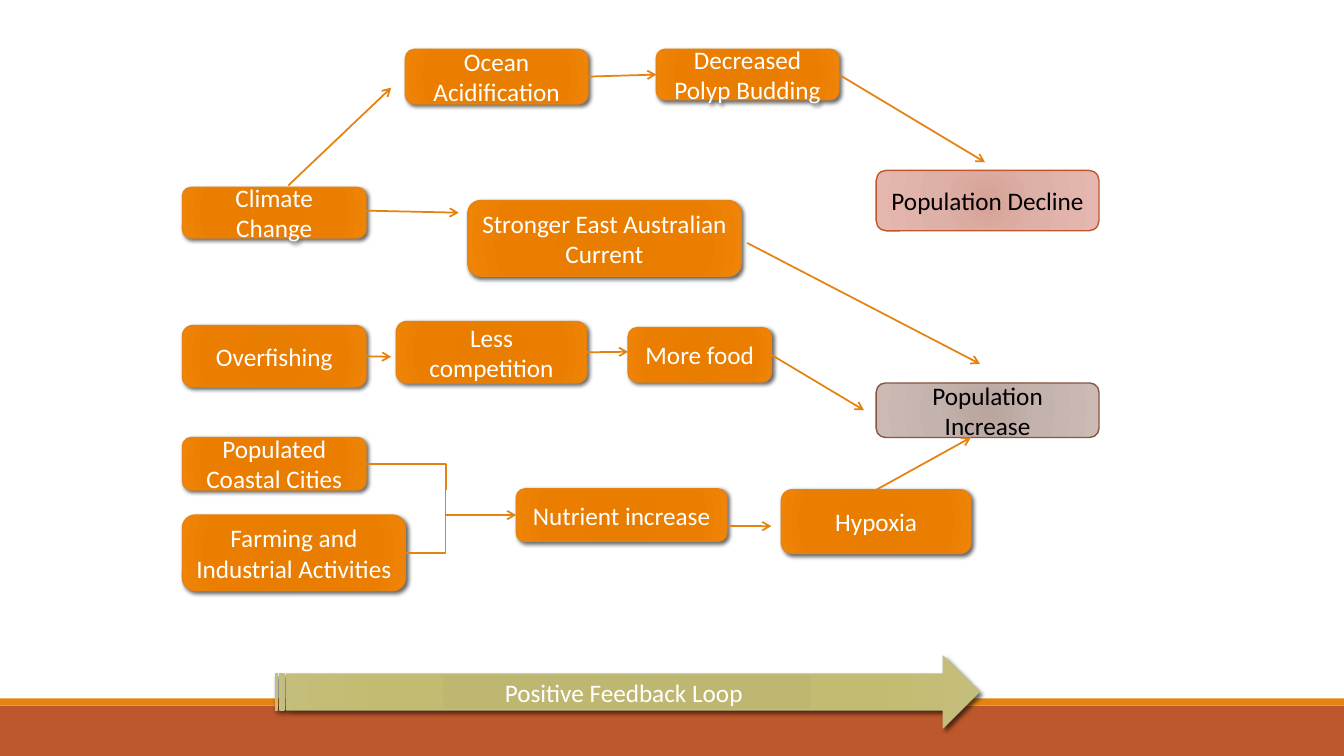
"""Build a flow chart slide on the causes of population decline and increase."""
import pptx
import pptx.dml.color
import pptx.enum.shapes
import pptx.enum.text
import pptx.oxml
import pptx.oxml.ns
import pptx.util

Inches = pptx.util.Inches
Pt = pptx.util.Pt
KIND = pptx.enum.shapes.MSO_SHAPE
LINK = pptx.enum.shapes.MSO_CONNECTOR
NS = pptx.oxml.ns.nsdecls("a")

BANDS = [(7, 0.5, "BD582C"), (6.93, 0.07, "E48312")]

ORANGE = ([(0, "E57B00"), (34, "E87D00"), (70, "EB7E00"), (100, "EF8407")],
          "E48312", "FFFFFF", True)
OLIVE = ([(0, "BEB76E"), (34, "BEB771"), (70, "C3BB71"), (100, "C5BF7D")],
         "C2BC80", "FFFFFF", True)
RED = ([(0, "D7A197"), (45, "DEB1A8"), (100, "E6B7AE")],
       "BD582C", "000000", False)
BROWN = ([(0, "B9A49E"), (45, "C4B2AD"), (100, "CCBAB5")],
         "865640", "000000", False)

LOOP = ("Positive Feedback Loop", 2.73, 6.51, 6.98, 0.71)
ENDS = [
    ("Population Decline", 8.69, 1.69, 2.21, 0.6, RED),
    ("Population Increase", 8.69, 3.8, 2.21, 0.54, BROWN),
]
CAUSES = [
    ("Climate Change", 1.81, 1.86, 1.82, 0.5),
    ("Overfishing", 1.81, 3.23, 1.82, 0.61),
    ("Populated Coastal Cities", 1.81, 4.34, 1.82, 0.52),
    ("Ocean Acidification", 4.02, 0.49, 1.81, 0.54),
    ("Decreased Polyp Budding", 6.51, 0.49, 1.81, 0.5),
    ("Stronger East Australian Current", 4.64, 1.99, 2.71, 0.75),
    ("Less competition", 3.93, 3.19, 1.89, 0.61),
    ("More food", 6.23, 3.25, 1.42, 0.54),
    ("Nutrient increase", 5.12, 4.85, 2.09, 0.52),
    ("Farming and Industrial Activities", 1.81, 5.11, 2.21, 0.75),
    ("Hypoxia", 7.75, 4.86, 1.88, 0.63),
]

TOP, LEFT, RIGHT = 0, 1, 3
ARROWS = [
    ((2.86, 1.84), (3.88, 0.87)),
    (("Ocean Acidification", RIGHT), ("Decreased Polyp Budding", LEFT)),
    (("Decreased Polyp Budding", RIGHT), (9.77, 1.61)),
    ((3.63, 2.09), (4.55, 2.11)),
    ((7.41, 2.41), (9.72, 3.61)),
    (("Overfishing", RIGHT), (3.88, 3.54)),
    (("Less competition", RIGHT), (6.23, 3.49)),
    (("More food", RIGHT), (8.57, 4.07)),
    ((4.42, 5.11), ("Nutrient increase", LEFT)),
    ((7.21, 5.22), (7.65, 5.22)),
    (("Hypoxia", TOP), (9.63, 4.34)),
]
BENDS = [((3.63, 4.6), (4.42, 4.86)), ((4.02, 5.49), (4.42, 4.86))]


def tint(hue):
    return pptx.dml.color.RGBColor.from_string(hue)


def shade(shape, stops):
    marks = "".join(
        f'<a:gs pos="{pos * 1000}"><a:srgbClr val="{hue}"/></a:gs>'
        for pos, hue in stops)
    fill = pptx.oxml.parse_xml(
        f'<a:gradFill {NS} rotWithShape="1"><a:gsLst>{marks}</a:gsLst>'
        '<a:path path="circle"><a:fillToRect l="100000" t="100000" '
        'r="100000" b="100000"/></a:path></a:gradFill>')
    shape._element.spPr.find(pptx.oxml.ns.qn("a:prstGeom")).addnext(fill)


def drop(shape):
    glow = shape._element.spPr.find(pptx.oxml.ns.qn("a:effectLst"))
    glow.append(pptx.oxml.parse_xml(
        f'<a:outerShdw {NS} blurRad="{Pt(3)}" dist="{Pt(2)}" dir="2700000">'
        '<a:srgbClr val="000000"><a:alpha val="60000"/></a:srgbClr>'
        '</a:outerShdw>'))


def add_box(slide, kind, text, x, y, w, h, style):
    stops, edge, ink, cast = style
    box = slide.shapes.add_shape(kind, *map(Inches, (x, y, w, h)))
    shade(box, stops)
    box.line.color.rgb = tint(edge)
    box.line.width = Pt(1)
    box.shadow.inherit = False
    if cast:
        drop(box)
    frame = box.text_frame
    frame.word_wrap = True
    frame.vertical_anchor = pptx.enum.text.MSO_ANCHOR.MIDDLE
    para = frame.paragraphs[0]
    para.text = text
    para.alignment = pptx.enum.text.PP_ALIGN.CENTER
    para.font.name = "Calibri"
    para.font.size = Pt(18)
    para.font.color.rgb = tint(ink)
    return box


def spot(end, boxes):
    if end[0] not in boxes:
        return Inches(end[0]), Inches(end[1])
    box, side = boxes[end[0]], end[1]
    across = {TOP: 0.5, LEFT: 0, RIGHT: 1}[side]
    down = 0 if side == TOP else 0.5
    return (int(box.left + box.width * across),
            int(box.top + box.height * down))


def add_link(slide, kind, start, stop, boxes):
    link = slide.shapes.add_connector(
        kind, *spot(start, boxes), *spot(stop, boxes))
    if start[0] in boxes:
        link.begin_connect(boxes[start[0]], start[1])
    if stop[0] in boxes:
        link.end_connect(boxes[stop[0]], stop[1])
    link.line.color.rgb = tint("E48312")
    link.line.width = Pt(1.25)
    link._element.spPr.append(pptx.oxml.parse_xml(f"<a:effectLst {NS}/>"))
    return link


def main():
    deck = pptx.Presentation()
    deck.slide_width, deck.slide_height = Inches(13.33), Inches(7.5)
    slide = deck.slides.add_slide(deck.slide_layouts[6])
    for y, h, hue in BANDS:
        band = slide.shapes.add_shape(
            KIND.RECTANGLE, 0, Inches(y), deck.slide_width, Inches(h))
        band.fill.solid()
        band.fill.fore_color.rgb = tint(hue)
        band.line.fill.background()
        band.shadow.inherit = False
    add_box(slide, KIND.STRIPED_RIGHT_ARROW, *LOOP, OLIVE)
    boxes = {}
    for row in ENDS + [cause + (ORANGE,) for cause in CAUSES]:
        boxes[row[0]] = add_box(slide, KIND.ROUNDED_RECTANGLE, *row)
    for start, stop in ARROWS:
        link = add_link(slide, LINK.STRAIGHT, start, stop, boxes)
        link.line._get_or_add_ln().append(
            pptx.oxml.parse_xml(f'<a:tailEnd {NS} type="arrow"/>'))
    for start, stop in BENDS:
        link = add_link(slide, LINK.ELBOW, start, stop, boxes)
        shape = link._element.spPr.find(pptx.oxml.ns.qn("a:prstGeom"))
        shape.set("prst", "bentConnector2")
    deck.save("out.pptx")


if __name__ == "__main__":
    main()
